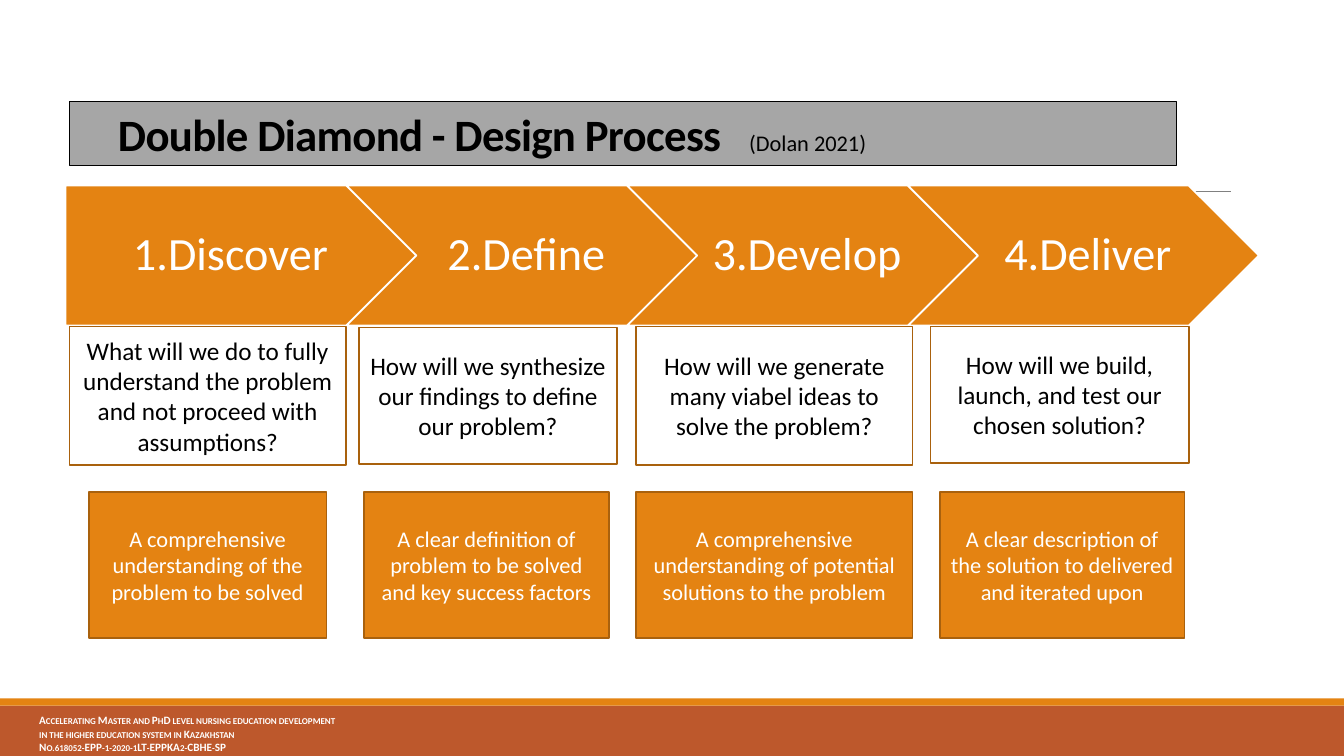
from dataclasses import dataclass

from lxml import etree
from pptx import Presentation
from pptx.dml.color import RGBColor
from pptx.enum.shapes import MSO_CONNECTOR, MSO_SHAPE
from pptx.enum.text import MSO_ANCHOR, MSO_AUTO_SIZE, PP_ALIGN
from pptx.oxml.ns import qn
from pptx.util import Inches, Pt

RECT, PENTAGON, CHEVRON = MSO_SHAPE.RECTANGLE, MSO_SHAPE.PENTAGON, MSO_SHAPE.CHEVRON
LEFT, CENTER = PP_ALIGN.LEFT, PP_ALIGN.CENTER
MIDDLE, BOTTOM = MSO_ANCHOR.MIDDLE, MSO_ANCHOR.BOTTOM
STRAIGHT = MSO_CONNECTOR.STRAIGHT
NO_FIT = MSO_AUTO_SIZE.NONE


@dataclass(frozen=True)
class Theme:
    font: str = "Calibri"
    orange: str = "E48312"
    brown: str = "A9610D"
    rust: str = "BD582C"
    gray: str = "A6A6A6"
    rule: str = "808080"
    white: str = "FFFFFF"
    black: str = "000000"
    title: int = 32
    citation: int = 16
    phase: int = 33
    question: int = 18
    outcome: int = 16
    footer: int = 8


class SlideBuilder:
    def __init__(self, prs, theme):
        self.t = theme
        self.s = prs.slides.add_slide(prs.slide_layouts[5])

    def style_font(self, font, size, color, bold=False):
        font.name = self.t.font
        font.size = Pt(size)
        font.bold = bold
        font.color.rgb = RGBColor.from_string(color)

    def paint(self, sp, fill, line=None, width=1.25):
        sp.fill.solid()
        sp.fill.fore_color.rgb = RGBColor.from_string(fill)
        if line:
            sp.line.color.rgb = RGBColor.from_string(line)
            sp.line.width = Pt(width)
        else:
            sp.line.fill.background()

    def shape(self, kind, box, fill, line=None):
        sp = self.s.shapes.add_shape(kind, *map(Inches, box))
        sp.shadow.inherit = False
        self.paint(sp, fill, line)
        return sp

    def label(self, sp, text, size, color):
        tf = sp.text_frame
        tf.word_wrap = True
        tf.vertical_anchor = MIDDLE
        p = tf.paragraphs[0]
        p.text = text
        p.alignment = CENTER
        self.style_font(p.font, size, color)

    def card(self, box, text, size, color, fill):
        self.label(self.shape(RECT, box, fill, self.t.brown), text, size, color)

    def phase(self, kind, box, text, inset):
        sp = self.shape(kind, box, self.t.orange, self.t.white)
        self.label(sp, text, self.t.phase, self.t.white)
        tf = sp.text_frame
        tf.word_wrap = False
        tf.margin_left, tf.margin_right = Inches(inset), Inches(0.05)
        tf.paragraphs[0].line_spacing = 0.9

    def title(self, box, text, citation, indent, tab):
        sp = self.s.shapes.title
        sp.left, sp.top, sp.width, sp.height = map(Inches, box)
        self.paint(sp, self.t.gray, self.t.black, 1)
        tf = sp.text_frame
        tf.auto_size = NO_FIT
        tf.word_wrap = True
        tf.vertical_anchor = BOTTOM
        tf.margin_left = Inches(indent)
        p = tf.paragraphs[0]
        p.alignment = LEFT
        p.line_spacing = 0.85
        tabs = etree.SubElement(p._p.get_or_add_pPr(), qn("a:tabLst"))
        etree.SubElement(tabs, qn("a:tab"), pos=str(Inches(tab)), algn="l")
        r = p.add_run()
        r.text = text
        self.style_font(r.font, self.t.title, self.t.black, True)
        r._r.get_or_add_rPr().set("spc", "-50")
        r = p.add_run()
        r.text = "\t" + citation
        self.style_font(r.font, self.t.citation, self.t.black)

    def rule(self, x1, x2, y):
        line = self.s.shapes.add_connector(
            STRAIGHT, Inches(x1), Inches(y), Inches(x2), Inches(y))
        line.line.color.rgb = RGBColor.from_string(self.t.rule)
        line.line.width = Pt(0.5)
        etree.SubElement(line._element.spPr, qn("a:effectLst"))

    def footer(self, box, lines):
        tf = self.s.shapes.add_textbox(*map(Inches, box)).text_frame
        tf.word_wrap = True
        for i, text in enumerate(lines):
            p = tf.add_paragraph() if i else tf.paragraphs[0]
            p.text = text
            self.style_font(p.font, self.t.footer, self.t.white, True)
            p._p.get_or_add_pPr().get_or_add_defRPr().set("cap", "small")


PHASES = ["1.Discover", "2.Define", "3.Develop", "4.Deliver"]
QUESTIONS = [
    (0.69, 3.24, 2.74, 1.37,
     "What will we do to fully understand the problem and not proceed with assumptions?"),
    (3.56, 3.25, 2.56, 1.35, "How will we synthesize our findings to define our problem?"),
    (6.31, 3.24, 2.74, 1.37, "How will we generate many viabel ideas to solve the problem?"),
    (9.23, 3.24, 2.56, 1.35, "How will we build, launch, and test our chosen solution?"),
]
OUTCOMES = [
    (0.88, 2.36, "A comprehensive understanding of the problem to be solved"),
    (3.61, 2.43, "A clear definition of problem to be solved and key success factors"),
    (6.31, 2.74, "A comprehensive understanding of potential solutions to the problem"),
    (9.32, 2.43, "A clear description of the solution to delivered and iterated upon"),
]
FOOTER = [
    "Accelerating Master and PhD level nursing education development",
    "in the higher education system in Kazakhstan",
    "No.618052-EPP-1-2020-1LT-EPPKA2-CBHE-SP",
]


def main():
    prs = Presentation()
    prs.slide_width, prs.slide_height = Inches(13.33), Inches(7.5)
    t = Theme()
    b = SlideBuilder(prs, t)

    b.shape(RECT, (0, 7, 13.33, 0.5), t.rust)
    b.shape(RECT, (0, 6.93, 13.33, 0.07), t.orange)
    b.rule(1.31, 12.21, 1.9)
    b.footer((0.29, 7.03, 4.59, 0.47), FOOTER)
    b.title((0.69, 1.01, 10.98, 0.63), "Double Diamond - Design Process",
            "(Dolan 2021)", 0.48, 6.26)

    for i, name in enumerate(PHASES):
        kind, inset = (CHEVRON, 0.14) if i else (PENTAGON, 0.19)
        b.phase(kind, (0.65 + 2.785 * i, 1.84, 3.48, 1.39), name, inset)
    for x, w, text in OUTCOMES:
        b.card((x, 4.88, w, 1.45), text, t.outcome, t.white, t.orange)
    for *box, text in QUESTIONS:
        b.card(box, text, t.question, t.black, t.white)

    prs.save("out.pptx")


if __name__ == "__main__":
    main()
